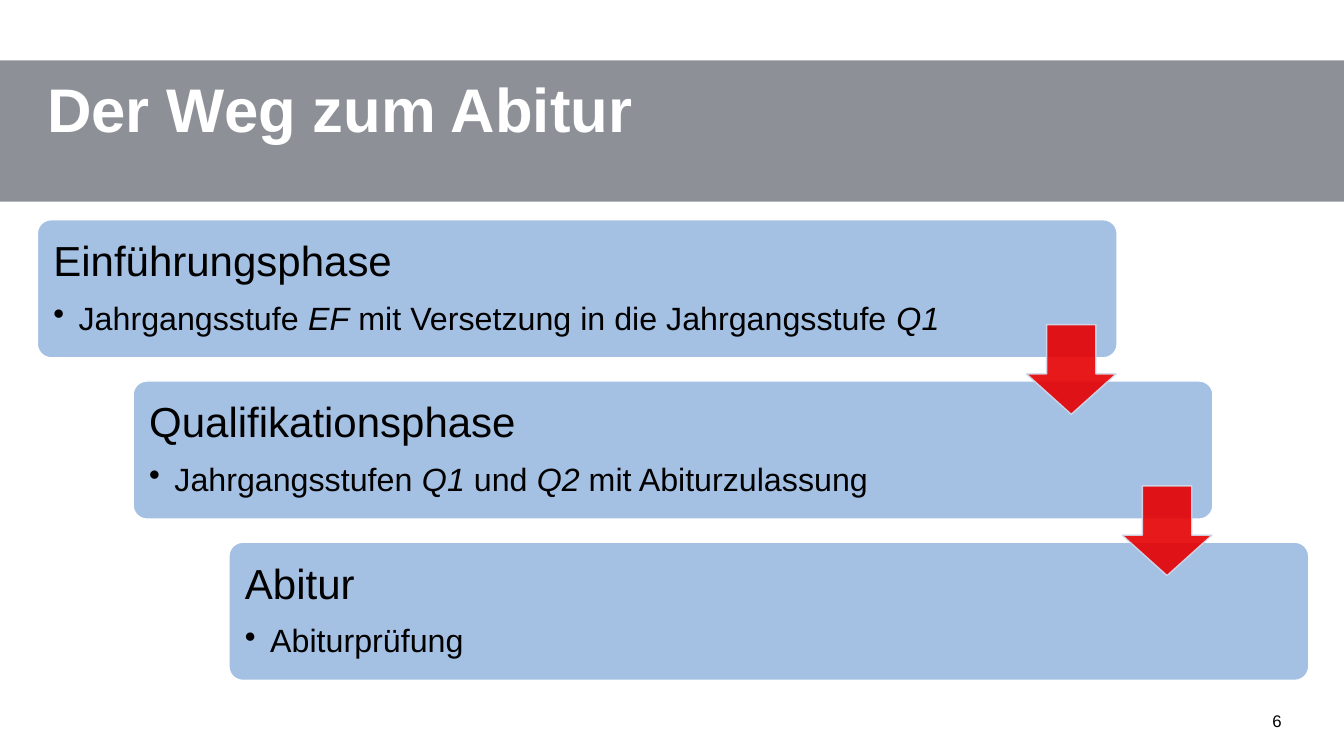
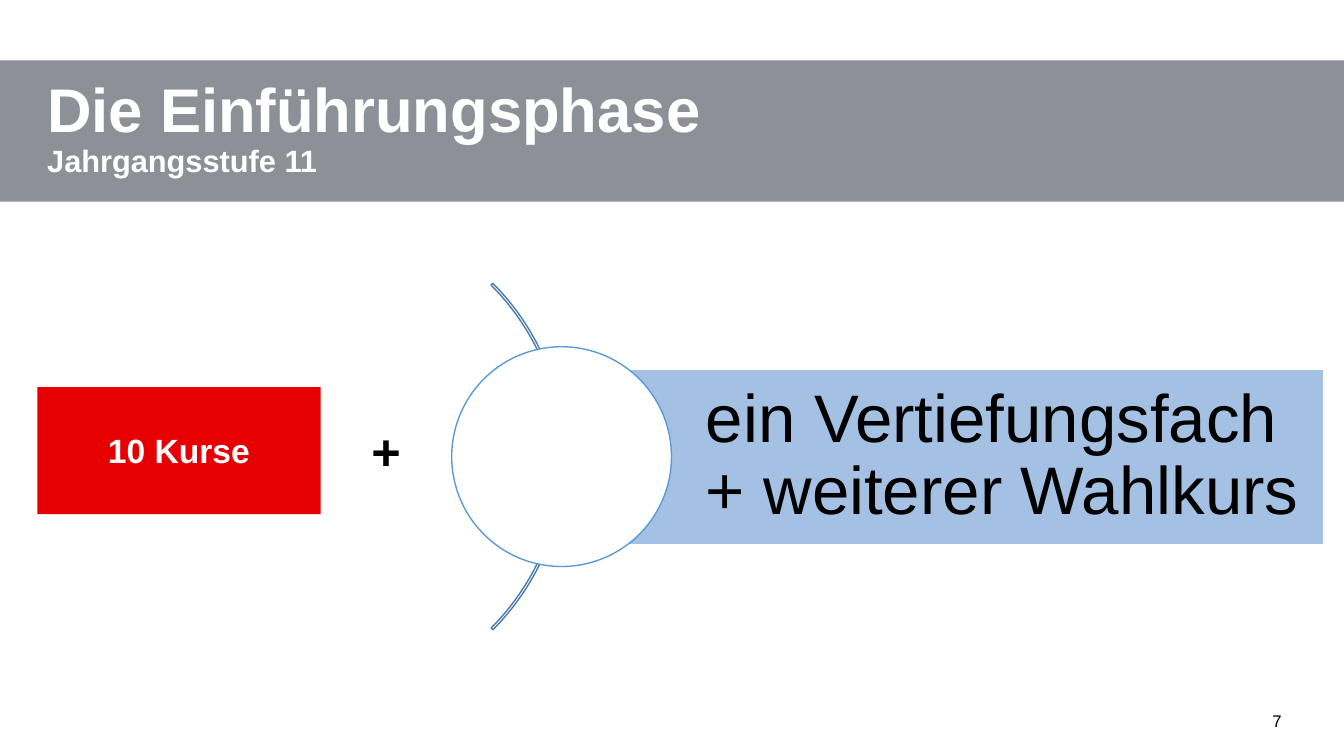
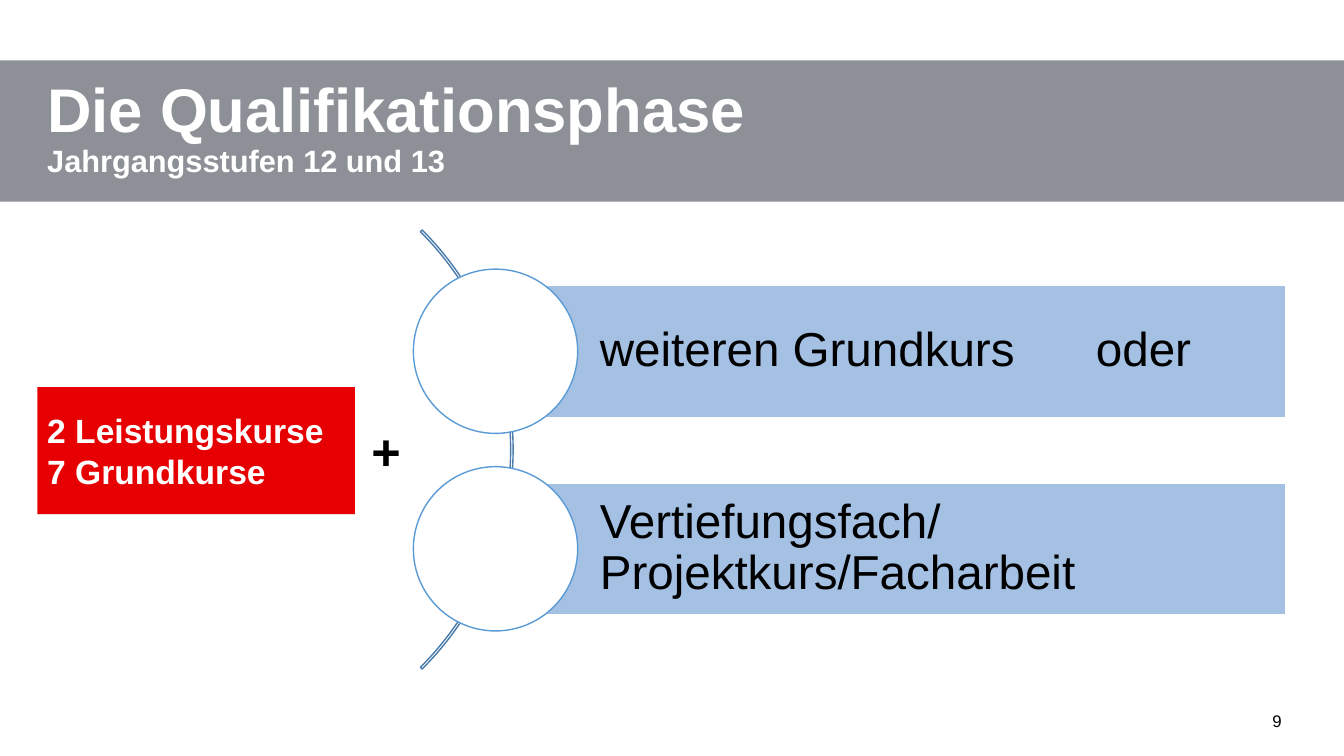
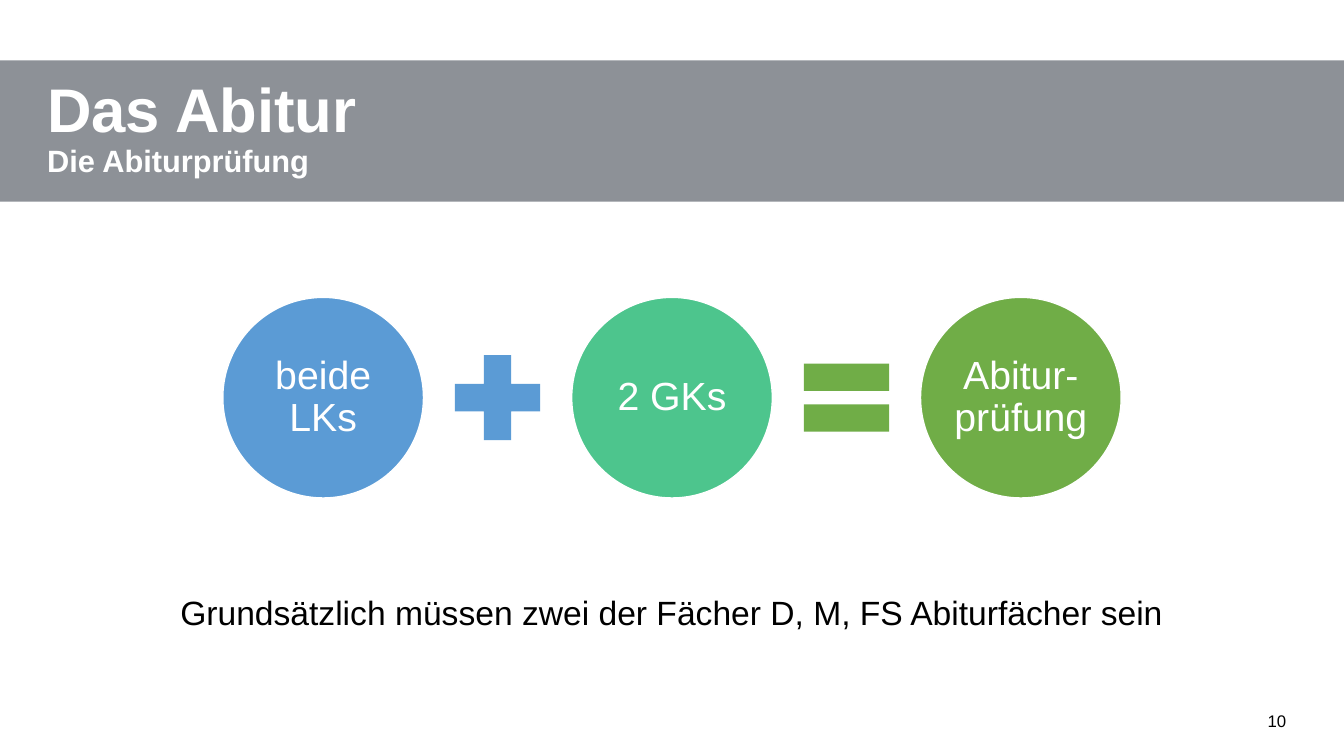
from dataclasses import dataclass

import pptx
import pptx.dml.color
import pptx.enum.shapes
import pptx.enum.text
import pptx.oxml.ns
import pptx.oxml.xmlchemy
import pptx.shapes.autoshape
import pptx.slide
import pptx.util
from lxml import etree

RGB = pptx.dml.color.RGBColor
SHAPE = pptx.enum.shapes.MSO_SHAPE
ALIGN = pptx.enum.text.PP_ALIGN
ANCHOR = pptx.enum.text.MSO_ANCHOR
qn = pptx.oxml.ns.qn
Shape = pptx.shapes.autoshape.Shape
Page = pptx.slide.Slide

# Shared look: 100 px to the inch
EMU_PER_PX = 9144
PAGE_WIDTH, PAGE_HEIGHT = 1333, 750
FONT = "Arial"
WHITE = RGB(0xFF, 0xFF, 0xFF)
BLACK = RGB(0x00, 0x00, 0x00)
BAND_GREY = RGB(0x8D, 0x91, 0x97)
PALE_BLUE = RGB(0xA4, 0xC0, 0xE3)
ARROW_EDGE = RGB(0xD2, 0xDE, 0xEF)
ARC_BLUE = RGB(0x49, 0x7C, 0xAB)
BLUE = RGB(0x5B, 0x9B, 0xD5)
TEAL = RGB(0x4D, 0xC5, 0x8D)
GREEN = RGB(0x70, 0xAD, 0x47)
RED = RGB(0xE6, 0x00, 0x02)


@dataclass(frozen=True)
class Box:
    left: int
    top: int
    width: int
    height: int


@dataclass(frozen=True)
class Span:
    text: str
    size: int
    color: RGB = BLACK
    bold: bool = False
    italic: bool = False


@dataclass(frozen=True)
class Para:
    spans: list[Span]
    align: ALIGN = ALIGN.LEFT
    line_spacing: float = 1.0
    space_after: int = 0
    bullet: bool = False
    tab: int = 0


@dataclass(frozen=True)
class Phase:
    heading: str
    detail: list[Span]


@dataclass(frozen=True)
class Fan:
    """An arc with labelled bars, each starting behind a circle."""
    arc: Box
    arc_band: float
    first_bar: Box
    step: int
    circle: int
    inset: int
    padding: int
    size: int
    labels: list[str]


@dataclass(frozen=True)
class Term:
    label: str
    color: RGB


def px(length: int) -> pptx.util.Emu:
    return pptx.util.Emu(length * EMU_PER_PX)


def place(box: Box) -> list[pptx.util.Emu]:
    return [px(n) for n in (box.left, box.top, box.width, box.height)]


# Drawing helpers
def write(shape: Shape, paras: list[Para], anchor: ANCHOR = ANCHOR.MIDDLE,
          insets: tuple[int, int, int, int] = (10, 5, 10, 5)) -> None:
    frame = shape.text_frame
    frame.word_wrap = True
    frame.vertical_anchor = anchor
    (frame.margin_left, frame.margin_top,
     frame.margin_right, frame.margin_bottom) = map(px, insets)
    for index, para in enumerate(paras):
        target = frame.add_paragraph() if index else frame.paragraphs[0]
        target.alignment = para.align
        target.line_spacing = para.line_spacing
        if para.space_after:
            target.space_after = pptx.util.Pt(para.space_after)
        properties = target._p.get_or_add_pPr()
        if para.bullet:
            properties.set("marL", str(px(25)))
            properties.set("indent", str(px(-25)))
            etree.SubElement(properties, qn("a:buChar"), char="•")
        if para.tab:
            tabs = etree.SubElement(properties, qn("a:tabLst"))
            etree.SubElement(tabs, qn("a:tab"), pos=str(px(para.tab)), algn="l")
        for number, span in enumerate(para.spans):
            if span.text.startswith("\n"):
                target.add_line_break()
            run = target.add_run()
            run.text = span.text.lstrip("\n")
            run.font.name = FONT
            run.font.size = pptx.util.Pt(span.size)
            run.font.bold = span.bold
            run.font.italic = span.italic
            run.font.color.rgb = span.color


def add_text(page: Page, box: Box, paras: list[Para], anchor: ANCHOR = ANCHOR.MIDDLE,
             insets: tuple[int, int, int, int] = (10, 5, 10, 5)) -> None:
    write(page.shapes.add_textbox(*place(box)), paras, anchor, insets)


def add_shape(page: Page, kind: SHAPE, box: Box, fill: RGB | None = None,
              line: RGB | None = None, adjust: tuple[float, ...] = ()) -> Shape:
    shape = page.shapes.add_shape(kind, *place(box))
    shape.shadow.inherit = False
    if fill is None:
        shape.fill.background()
    else:
        shape.fill.solid()
        shape.fill.fore_color.rgb = fill
    if line is None:
        shape.line.fill.background()
    else:
        shape.line.color.rgb = line
        shape.line.width = pptx.util.Pt(1)
    for index, value in enumerate(adjust):
        shape.adjustments[index] = value
    return shape


def set_opacity(shape: Shape, percent: int) -> None:
    for color in list(shape._element.spPr.iter(qn("a:srgbClr"))):
        etree.SubElement(color, qn("a:alpha"), val=str(percent * 1000))


def add_page(deck: pptx.presentation.Presentation, number: int, title: str,
             subtitle: str = "") -> Page:
    page = deck.slides.add_slide(deck.slide_layouts[6])
    add_shape(page, SHAPE.RECTANGLE, Box(0, 60, PAGE_WIDTH, 140), BAND_GREY)
    spans = [Span(title, 44, WHITE, bold=True)]
    if subtitle:
        spans.append(Span("\n" + subtitle, 22, WHITE, bold=True))
    add_text(page, Box(37, 74, 1183, 124), [Para(spans, line_spacing=0.9)], ANCHOR.TOP)
    add_text(page, Box(1237, 686, 59, 59),
             [Para([Span(str(number), 12)], ALIGN.CENTER)])
    return page


# Page content
def draw_phases(page: Page, phases: list[Phase]) -> None:
    step_x, step_y = 95, 160
    for index, phase in enumerate(phases):
        box = Box(37 + index * step_x, 218 + index * step_y, 1071, 137)
        card = add_shape(page, SHAPE.ROUNDED_RECTANGLE, box, PALE_BLUE, WHITE, (0.1,))
        write(card, [
            Para([Span(phase.heading, 30)], line_spacing=0.9, space_after=12),
            Para(phase.detail, line_spacing=0.9, bullet=True),
        ], insets=(12, 12, 12, 12))
    for index in range(len(phases) - 1):
        box = Box(1018 + index * step_x, 322 + index * step_y, 89, 89)
        arrow = add_shape(page, SHAPE.DOWN_ARROW, box, RED, ARROW_EDGE, (0.55, 0.45))
        set_opacity(arrow, 90)


def draw_fan(page: Page, fan: Fan) -> None:
    # Angles of 315 and 45 degrees, in units of 100000 / 60000 degrees
    add_shape(page, SHAPE.BLOCK_ARC, fan.arc, None, ARC_BLUE, (189, 27, fan.arc_band))
    first = fan.first_bar
    for index, label in enumerate(fan.labels):
        top = first.top + index * fan.step
        bar = add_shape(page, SHAPE.RECTANGLE,
                        Box(first.left, top, first.width, first.height),
                        PALE_BLUE, WHITE)
        tab = 492 if "\t" in label else 0
        write(bar, [Para([Span(label, fan.size)], line_spacing=0.9, tab=tab)],
              insets=(fan.inset, fan.padding, fan.padding, fan.padding))
        circle = Box(first.left - fan.circle // 2,
                     top + (first.height - fan.circle) // 2, fan.circle, fan.circle)
        add_shape(page, SHAPE.OVAL, circle, WHITE, BLUE)


def draw_courses(page: Page, width: int, lines: list[str], align: ALIGN) -> None:
    block = add_shape(page, SHAPE.RECTANGLE, Box(37, 384, width, 126), RED)
    write(block, [Para([Span(line, 24, WHITE, bold=True)], align) for line in lines])
    add_text(page, Box(318, 384, 130, 126),
             [Para([Span("+", 36, bold=True)], ALIGN.CENTER)], insets=(0, 0, 0, 0))


def draw_equation(page: Page, terms: list[Term], signs: list[tuple[SHAPE, RGB]]) -> None:
    circle, sign, gap, left, top = 199, 115, 16, 221, 295
    step = circle + sign + 2 * gap
    for index, term in enumerate(terms):
        disc = add_shape(page, SHAPE.OVAL, Box(left + index * step, top, circle, circle),
                         term.color, WHITE)
        write(disc, [Para([Span(term.label, 28, WHITE)], ALIGN.CENTER, 0.9)],
              insets=(4, 4, 4, 4))
    for index, (kind, color) in enumerate(signs):
        box = Box(left + circle + gap + index * step, top + (circle - sign) // 2,
                  sign, sign)
        add_shape(page, kind, box, color)


def main() -> None:
    deck = pptx.Presentation()
    deck.slide_width, deck.slide_height = px(PAGE_WIDTH), px(PAGE_HEIGHT)

    # Overview of the phases
    page = add_page(deck, 6, "Der Weg zum Abitur")
    draw_phases(page, [
        Phase("Einführungsphase", [
            Span("Jahrgangsstufe ", 23), Span("EF", 23, italic=True),
            Span(" mit Versetzung in die Jahrgangsstufe ", 23),
            Span("Q1", 23, italic=True)]),
        Phase("Qualifikationsphase", [
            Span("Jahrgangsstufen ", 23), Span("Q1", 23, italic=True),
            Span(" und ", 23), Span("Q2", 23, italic=True),
            Span(" mit Abiturzulassung", 23)]),
        Phase("Abitur", [Span("Abiturprüfung", 23)]),
    ])

    # Introductory phase
    page = add_page(deck, 7, "Die Einführungsphase", "Jahrgangsstufe 11")
    draw_fan(page, Fan(
        arc=Box(74, 210, 486, 486), arc_band=0.005,
        first_bar=Box(557, 366, 756, 174), step=0, circle=218,
        inset=143, padding=13, size=48,
        labels=["ein Vertiefungsfach + weiterer Wahlkurs"]))
    draw_courses(page, 281, ["10 Kurse"], ALIGN.CENTER)

    # Qualification phase
    page = add_page(deck, 9, "Die Qualifikationsphase", "Jahrgangsstufen 12 und 13")
    draw_fan(page, Fan(
        arc=Box(-107, 138, 616, 616), arc_band=0.004,
        first_bar=Box(491, 283, 784, 131), step=196, circle=163,
        inset=104, padding=9, size=34,
        labels=["weiteren Grundkurs\toder", "Vertiefungsfach/ Projektkurs/Facharbeit"]))
    draw_courses(page, 315, ["2 Leistungskurse", "7 Grundkurse"], ALIGN.LEFT)

    # Final examination
    page = add_page(deck, 10, "Das Abitur", "Die Abiturprüfung")
    draw_equation(
        page,
        [Term("beide LKs", BLUE), Term("2 GKs", TEAL), Term("Abitur-prüfung", GREEN)],
        [(SHAPE.MATH_PLUS, BLUE), (SHAPE.MATH_EQUAL, GREEN)])
    note = "Grundsätzlich müssen zwei der Fächer D, M, FS Abiturfächer sein"
    add_text(page, Box(105, 565, 1122, 85), [Para([Span(note, 24)], ALIGN.CENTER)],
             insets=(0, 0, 0, 0))

    deck.save("out.pptx")


if __name__ == "__main__":
    main()
